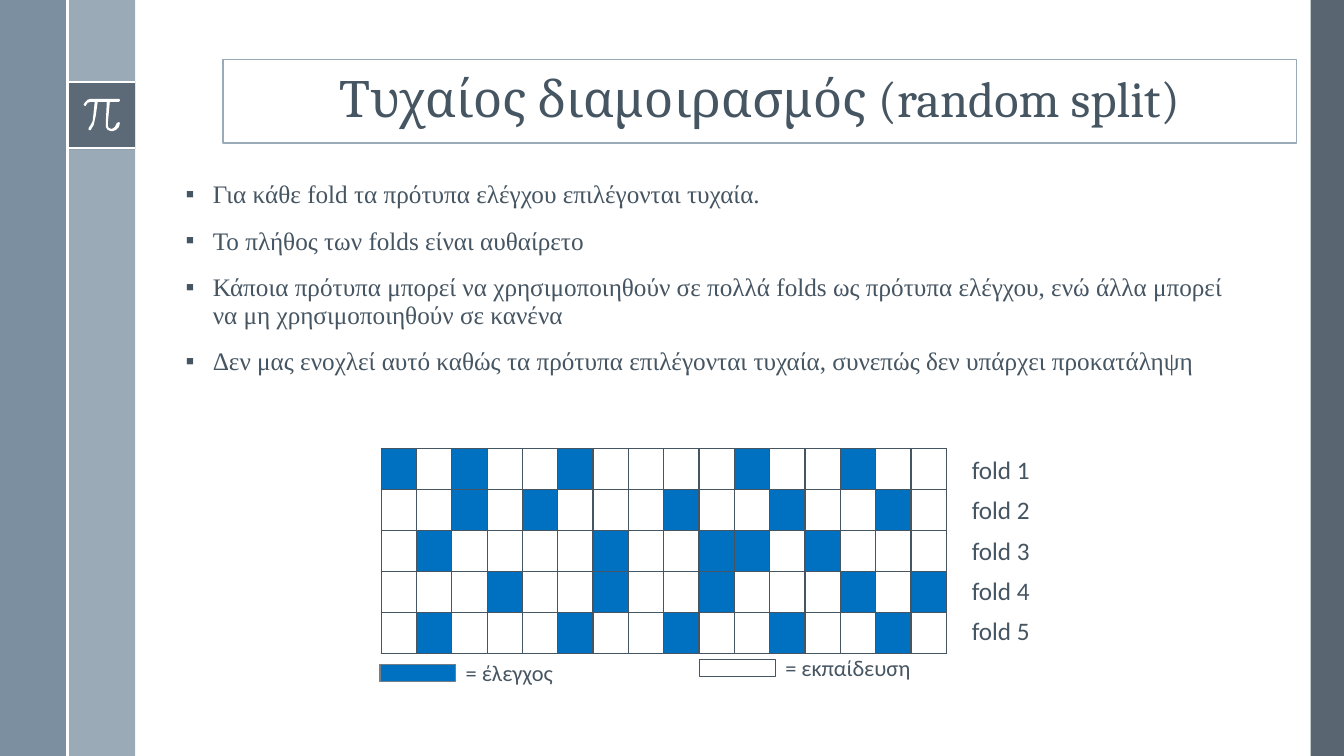
from lxml import etree
from pptx import Presentation
from pptx import util as u
from pptx.dml.color import RGBColor
from pptx.enum import shapes, text
from pptx.oxml.ns import qn

SLATE = RGBColor(0x46, 0x55, 0x62)
DARK = RGBColor(0x47, 0x55, 0x62)
STEEL = RGBColor(0x6A, 0x80, 0x93)
MIST = RGBColor(0x9B, 0xAA, 0xB7)
GREY = RGBColor(0x73, 0x7E, 0x87)
BLUE = RGBColor(0x00, 0x70, 0xC0)
WHITE = RGBColor(0xFF, 0xFF, 0xFF)

TITLE = "Τυχαίος διαμοιρασμός (random split)"
BULLETS = [
    "Για κάθε fold τα πρότυπα ελέγχου επιλέγονται τυχαία.",
    "Το πλήθος των folds είναι αυθαίρετο",
    "Κάποια πρότυπα μπορεί να χρησιμοποιηθούν σε πολλά folds ως πρότυπα ελέγχου, "
    "ενώ άλλα μπορεί να μη χρησιμοποιηθούν σε κανένα",
    "Δεν μας ενοχλεί αυτό καθώς τα πρότυπα επιλέγονται τυχαία, "
    "συνεπώς δεν υπάρχει προκατάληψη",
]
PATTERN_COUNT = 16
TEST_PATTERNS = [
    {0, 2, 5, 10, 13},
    {2, 4, 8, 11, 14},
    {1, 6, 9, 10, 12},
    {3, 6, 9, 13, 15},
    {1, 5, 8, 11, 14},
]
PI_OUTLINE = [
    (118, 98), (90, 98), (87, 99), (84.5, 101.5), (83, 104), (84, 105), (85, 105),
    (87, 102), (90, 101), (94, 101), (93, 111), (91.5, 120), (90, 124.5), (88, 127),
    (88, 129), (90, 129), (93, 124), (95, 115), (97, 101), (106, 101), (105, 122),
    (105, 126), (107, 129), (110, 130), (112, 130), (115, 129), (117.5, 126),
    (119, 122), (118, 121), (116, 122), (114.5, 126), (111, 128), (108, 127),
    (107, 125), (107, 122), (109, 101), (118, 101), (119, 100), (119, 99),
]


def place(shape, left, top, width, height):
    shape.left, shape.top = u.Inches(left), u.Inches(top)
    shape.width, shape.height = u.Inches(width), u.Inches(height)


def add_run(paragraph, words, size, font):
    run = paragraph.add_run()
    run.text = words
    run.font.size = u.Pt(size)
    run.font.name = font
    run.font.color.rgb = SLATE


def add_rectangle(slide, left, top, width, height, color, opacity=100, outline=None):
    shape = slide.shapes.add_shape(
        shapes.MSO_SHAPE.RECTANGLE,
        u.Inches(left), u.Inches(top), u.Inches(width), u.Inches(height))
    shape.shadow.inherit = False
    shape.fill.solid()
    shape.fill.fore_color.rgb = color
    if opacity < 100:
        fill_color = shape.fill._xPr.find(".//" + qn("a:srgbClr"))
        etree.SubElement(fill_color, qn("a:alpha"), val=str(opacity * 1000))
    if outline is None:
        shape.line.fill.background()
    else:
        shape.line.color.rgb = outline
        shape.line.width = u.Pt(1)


def add_white_line(slide, left, top, right, bottom):
    line = slide.shapes.add_connector(
        shapes.MSO_CONNECTOR.STRAIGHT,
        u.Inches(left), u.Inches(top), u.Inches(right), u.Inches(bottom))
    line.line.color.rgb = WHITE
    line.line.width = u.Pt(1.5)
    etree.SubElement(line._element.spPr, qn("a:effectLst"))


def add_pi(slide):
    builder = slide.shapes.build_freeform(*PI_OUTLINE[0], scale=u.Inches(0.01))
    builder.add_line_segments(PI_OUTLINE[1:], close=True)
    shape = builder.convert_to_shape()
    shape.shadow.inherit = False
    shape.fill.solid()
    shape.fill.fore_color.rgb = WHITE
    shape.line.fill.background()


def add_side_bands(slide):
    add_rectangle(slide, 13, 0, 0.33, 7.5, DARK, 90)
    add_rectangle(slide, 0.67, 0, 0.67, 7.5, MIST)
    add_rectangle(slide, 0, 0, 0.67, 7.5, STEEL, 88)
    add_rectangle(slide, 0.67, 0.81, 0.67, 0.67, DARK, 75)
    for top in (0.81, 1.47):
        add_white_line(slide, 0.67, top, 1.34, top)
    add_pi(slide)
    add_white_line(slide, 0.67, 0, 0.67, 7.5)


def fill_title(title):
    place(title, 2.21, 0.59, 10.65, 0.83)
    title.fill.solid()
    title.fill.fore_color.rgb = WHITE
    title.line.color.rgb = MIST
    title.line.width = u.Pt(1)
    frame = title.text_frame
    frame.auto_size = text.MSO_AUTO_SIZE.NONE
    frame.vertical_anchor = text.MSO_ANCHOR.MIDDLE
    paragraph = frame.paragraphs[0]
    paragraph.alignment = text.PP_ALIGN.CENTER
    paragraph.line_spacing = 0.9
    add_run(paragraph, TITLE, 36, "Cambria")


def fill_body(body):
    place(body, 1.74, 1.75, 10.7, 5)
    frame = body.text_frame
    frame.auto_size = text.MSO_AUTO_SIZE.NONE
    frame.vertical_anchor = text.MSO_ANCHOR.TOP
    for index, sentence in enumerate(BULLETS):
        paragraph = frame.add_paragraph() if index else frame.paragraphs[0]
        paragraph.line_spacing = 0.9
        paragraph.space_before = u.Pt(14)
        properties = paragraph._p.get_or_add_pPr()
        properties.set("marL", str(u.Inches(0.27)))
        properties.set("indent", str(-u.Inches(0.27)))
        etree.SubElement(properties, qn("a:buFont"), typeface="Times New Roman")
        etree.SubElement(properties, qn("a:buChar"), char="▪")
        add_run(paragraph, sentence, 18, "Times New Roman")


def set_borders(cell):
    properties = cell._tc.get_or_add_tcPr()
    for position, side in enumerate(("a:lnL", "a:lnR", "a:lnT", "a:lnB")):
        border = etree.Element(qn(side), w=str(u.Pt(1)))
        fill = etree.SubElement(border, qn("a:solidFill"))
        etree.SubElement(fill, qn("a:srgbClr"), val=str(SLATE))
        properties.insert(position, border)


def add_fold_table(slide):
    frame = slide.shapes.add_table(
        len(TEST_PATTERNS), PATTERN_COUNT,
        u.Inches(3.78), u.Inches(4.45), u.Inches(5.61), u.Inches(2.03))
    table = frame.table
    table.first_row = table.horz_banding = False
    for row, test_columns in enumerate(TEST_PATTERNS):
        for column in range(PATTERN_COUNT):
            cell = table.cell(row, column)
            cell.margin_top = cell.margin_bottom = 0
            cell.fill.solid()
            cell.fill.fore_color.rgb = BLUE if column in test_columns else WHITE
            set_borders(cell)


def add_label(slide, left, top, width, height, words, size):
    box = slide.shapes.add_textbox(
        u.Inches(left), u.Inches(top), u.Inches(width), u.Inches(height))
    box.text_frame.word_wrap = True
    add_run(box.text_frame.paragraphs[0], words, size, "Calibri")


def add_legend_entry(slide, left, top, color, outline, words):
    add_rectangle(slide, left, top, 0.75, 0.17, color, outline=outline)
    add_label(slide, left + 0.75, top - 0.1, 2.3, 0.37, words, 16)


def main():
    presentation = Presentation()
    presentation.slide_width = u.Inches(13.33)
    presentation.slide_height = u.Inches(7.5)
    slide = presentation.slides.add_slide(presentation.slide_layouts[1])
    add_side_bands(slide)
    fill_title(slide.shapes.title)
    fill_body(slide.placeholders[1])
    add_fold_table(slide)
    for index in range(len(TEST_PATTERNS)):
        add_label(slide, 9.54, 4.46 + 0.4 * index, 1.37, 0.4, f"fold {index + 1}", 18)
    add_legend_entry(slide, 3.77, 6.59, BLUE, GREY, "= έλεγχος")
    add_legend_entry(slide, 6.94, 6.54, WHITE, SLATE, "= εκπαίδευση")
    presentation.save("out.pptx")


if __name__ == "__main__":
    main()
